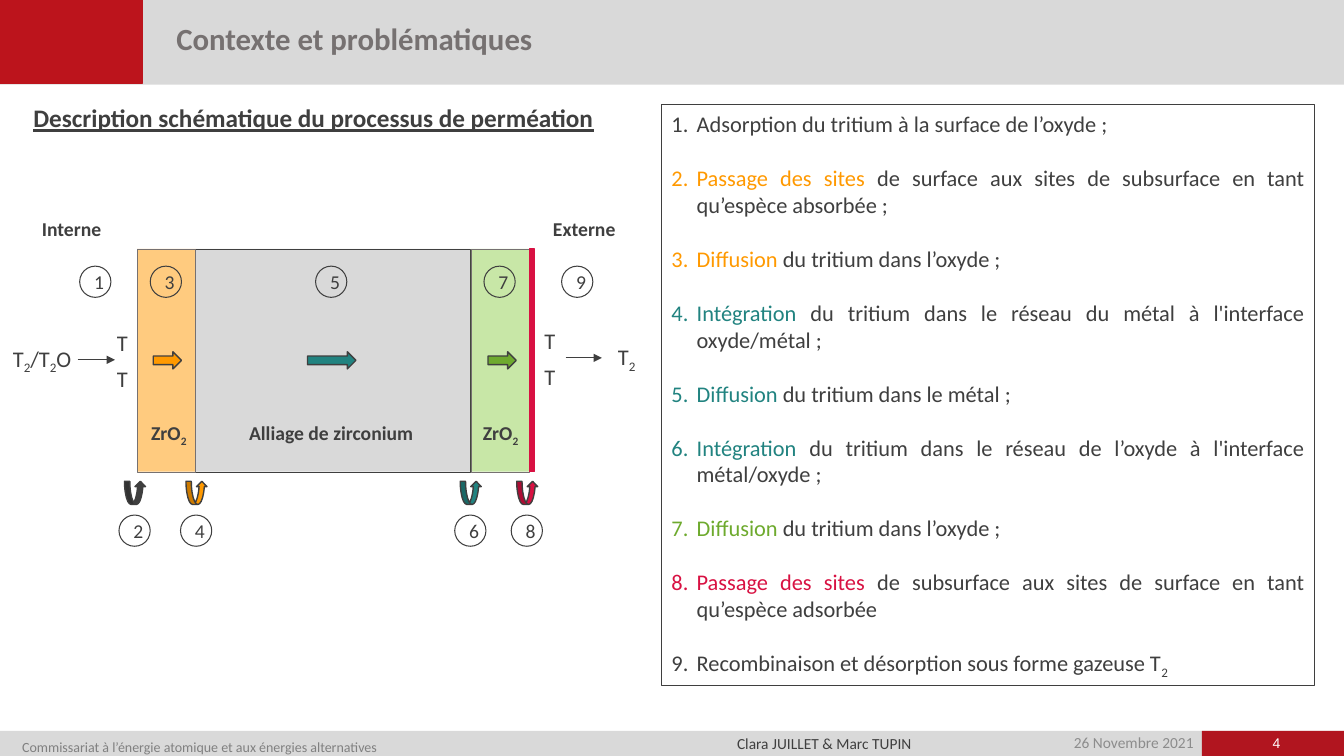
from lxml.etree import SubElement
from pptx import Presentation
from pptx.dml.color import RGBColor
from pptx.enum.shapes import MSO_CONNECTOR as Link, MSO_SHAPE as Kind
from pptx.enum.text import MSO_ANCHOR as Anchor, MSO_AUTO_SIZE as Fit, PP_ALIGN as Align
from pptx.oxml.ns import qn
from pptx.util import Inches, Pt

COLS, ROWS = 133.3, 75
INK, GREY, SILVER, RED = "3F3F3F", "767171", "D9D9D9", "BC141C"
ORANGE, TEAL, GREEN, PINK = "FF9900", "218380", "6EAA2E", "D81142"
TOP, TALL, DISC = 24.7, 22.1, 3.1

STEPS = [
    ("", INK, "Adsorption du tritium à la surface de l’oxyde ;"),
    ("Passage des sites ", ORANGE, "de surface aux sites de subsurface en tant qu’espèce absorbée ;"),
    ("Diffusion ", ORANGE, "du tritium dans l’oxyde ;"),
    ("Intégration ", TEAL, "du tritium dans le réseau du métal à l'interface oxyde/métal ;"),
    ("Diffusion ", TEAL, "du tritium dans le métal ;"),
    ("Intégration ", TEAL, "du tritium dans le réseau de l’oxyde à l'interface métal/oxyde ;"),
    ("Diffusion ", GREEN, "du tritium dans l’oxyde ;"),
    ("Passage des sites ", PINK, "de subsurface aux sites de surface en tant qu’espèce adsorbée"),
    ("", INK, "Recombinaison et désorption sous forme gazeuse T|2"),
]
LAYERS = [(19.4, 27.2, SILVER, 100, INK, 0.25), (13.6, 5.8, ORANGE, 50, GREY, 0.25),
          (46.7, 5.8, "92D050", 50, GREY, 0.25), (52.5, 0.5, PINK, 100, PINK, 1)]
FLOWS = [(15.2, 2.8, ORANGE), (30.5, 4.8, TEAL), (48.4, 2.8, GREEN)]
ZONES = [("1", 7.9), ("3", 14.9), ("5", 31.3), ("7", 48), ("9", 55.7)]
TURNS = [("2", 11.8, INK), ("4", 17.9, ORANGE), ("6", 45.1, TEAL), ("8", 50.7, PINK)]
GASES = [("T|2|/T|2|O", 0.3, 33.7, 8.1), ("T", 10.6, 32.2, 3.1), ("T", 10.6, 35.7, 3.1),
         ("T", 53, 32, 3.1), ("T", 53, 35.5, 3.1), ("T|2", 60.3, 33.6, 3.9)]
NAMES = [("ZrO|2", 13.9, 41.3, 5.7), ("ZrO|2", 46.8, 41.3, 5.7),
         ("Alliage de zirconium", 23.6, 41.3, 18.5),
         ("Interne", 3.1, 21, 8), ("Externe", 53.8, 21, 8.3)]


def grid(*cells):
    """Turn grid cells into lengths."""
    return [Inches(cell / 10) for cell in cells]


def tint(color, code):
    """Set a colour from its hex code."""
    color.rgb = RGBColor.from_string(code)


def apply(item, **format):
    """Set each given attribute on an item."""
    for name, value in format.items():
        setattr(item, name, value)


def write(para, text, size, code=INK, **format):
    """Add runs to a paragraph; every second part between bars is a subscript."""
    for place, part in enumerate(text.split("|")):
        run = para.add_run()
        apply(run.font, size=Pt(size), name="Calibri")
        apply(run.font, **format)
        tint(run.font.color, code)
        run.text = part
        if place % 2:
            run.font._element.set("baseline", "-25000")


def block(slide, kind, box, fill=None, line=None, width=1, alpha=100):
    """Draw a preset shape."""
    shape = slide.shapes.add_shape(kind, *grid(*box))
    shape.shadow.inherit = False
    if fill:
        shape.fill.solid()
        tint(shape.fill.fore_color, fill)
        if alpha < 100:
            color = shape.fill._xPr.find(qn("a:solidFill"))[0]
            SubElement(color, qn("a:alpha")).set("val", str(alpha * 1000))
    else:
        shape.fill.background()
    if line:
        tint(shape.line.color, line)
        shape.line.width = Pt(width)
    else:
        shape.line.fill.background()
    return shape


def label(slide, text, box, size, code=INK, align=Align.LEFT, space=1, wrap=False, pad=None, **format):
    """Place a line of text."""
    frame = slide.shapes.add_textbox(*grid(*box)).text_frame
    frame.word_wrap = wrap
    if pad is not None:
        side, edge = grid(*pad)
        apply(frame, margin_left=side, margin_right=side, margin_top=edge, margin_bottom=edge)
    apply(frame.paragraphs[0], alignment=align, line_spacing=space)
    write(frame.paragraphs[0], text, size, code, **format)


def disc(slide, text, left, top):
    """Draw a numbered circle."""
    shape = block(slide, Kind.OVAL, (left, top, DISC, DISC), line=INK, width=0.75)
    shape.text_frame.vertical_anchor = Anchor.MIDDLE
    shape.text_frame.paragraphs[0].alignment = Align.CENTER
    write(shape.text_frame.paragraphs[0], text, 14)


def arrow(slide, left, row, span):
    """Draw a thin level arrow."""
    line = slide.shapes.add_connector(Link.STRAIGHT, *grid(left, row, left + span, row))
    tint(line.line.color, INK)
    line.line.width = Pt(0.5)
    SubElement(line.line._get_or_add_ln(), qn("a:tailEnd")).set("type", "triangle")
    SubElement(line._element.spPr, qn("a:effectLst"))


def place(holder, *box):
    """Move a placeholder and return its text frame."""
    apply(holder, **dict(zip(("left", "top", "width", "height"), grid(*box))))
    holder.text_frame.auto_size = Fit.NONE
    return holder.text_frame


def bands(slide):
    """Draw the header and footer bands with their texts."""
    for box, fill in (((0, 72.5, COLS, 2.5), SILVER), ((0, 0, COLS, 8.4), SILVER),
                      ((119.2, 72.5, 14.1, 2.5), "B1151F"), ((0, 0, 14.1, 8.3), RED)):
        block(slide, Kind.RECTANGLE, box, fill, RED if fill == RED else None)
    pad = (0.8, 0)
    label(slide, "26 Novembre 2021", (96.1, 72.9, 23.1, 1.7), 11, "8C8C8C", Align.RIGHT, 0.9, True, pad)
    label(slide, "Commissariat à l’énergie atomique et aux énergies alternatives",
          (1.4, 72.6, 60.3, 2.1), 10, "808080", space=1.4, wrap=True, pad=pad)
    label(slide, "Clara JUILLET & Marc TUPIN", (72.3, 72.8, 19.1, 1.9), 11, pad=pad)
    label(slide, "4", (122, 72.9, 9.2, 1.7), 10, "FFFFFF", Align.CENTER, wrap=True, pad=pad, name="Arial")


def heading(slide):
    """Fill the title and bring it above the band."""
    title = slide.shapes.title
    frame = place(title, 16.1, 2.1, 117.2, 4.1)
    apply(frame, vertical_anchor=Anchor.MIDDLE, margin_left=Inches(0.14))
    apply(frame.paragraphs[0], alignment=Align.LEFT, line_spacing=0.8)
    write(frame.paragraphs[0], "Contexte et problématiques", 22, GREY, bold=True)
    slide.shapes._spTree.append(title._element)


def steps(slide):
    """Fill the framed list of numbered steps."""
    body = slide.placeholders[1]
    frame = place(body, 65.6, 10.4, 64.8, 57.6)
    tint(body.line.color, INK)
    body.line.width = Pt(0.75)
    for place_no, (lead, code, rest) in enumerate(STEPS):
        para = frame.add_paragraph() if place_no else frame.paragraphs[0]
        props = para._p.get_or_add_pPr()
        for name, value in (("marL", "228600"), ("indent", "-228600")):
            props.set(name, value)
        SubElement(props, qn("a:buFont")).set("typeface", "Calibri")
        SubElement(props, qn("a:buAutoNum")).set("type", "arabicPeriod")
        apply(para, alignment=Align.JUSTIFY, space_before=Pt(19.4 if place_no else 0))
        if lead:
            write(para, lead, 16, code)
        write(para, rest, 16)


def scheme(slide):
    """Draw the layers, arrows, circles and names of the wall."""
    label(slide, "Description schématique du processus de perméation", (2.1, 9.7, 58, 4), 18,
          align=Align.CENTER, bold=True, underline=True)
    for left, span, fill, alpha, line, width in LAYERS:
        block(slide, Kind.RECTANGLE, (left, TOP, span, TALL), fill, line, width, alpha)
    for left, span, fill in FLOWS:
        block(slide, Kind.RIGHT_ARROW, (left, 34.9, span, 1.7), fill, INK)
    for text, left in ZONES:
        disc(slide, text, left, 26.4)
    for text, left, fill in TURNS:
        disc(slide, text, left, 51.1)
        block(slide, Kind.CURVED_UP_ARROW, (left + 0.55, 47.75, 2.1, 2.3), fill, INK)
    for text, left, top, span in GASES:
        label(slide, text, (left, top, span, 3.7), 16)
    for text, left, top, span in NAMES:
        label(slide, text, (left, top, span, 3.4), 14, align=Align.CENTER, bold=True)
    arrow(slide, 7.7, 35.7, 3.7)
    arrow(slide, 56.1, 35.5, 3.6)


def main():
    """Build and save the slide."""
    deck = Presentation()
    deck.slide_width, deck.slide_height = grid(COLS, ROWS)
    slide = deck.slides.add_slide(deck.slide_layouts[1])
    bands(slide)
    heading(slide)
    steps(slide)
    scheme(slide)
    deck.save("out.pptx")


if __name__ == "__main__":
    main()
